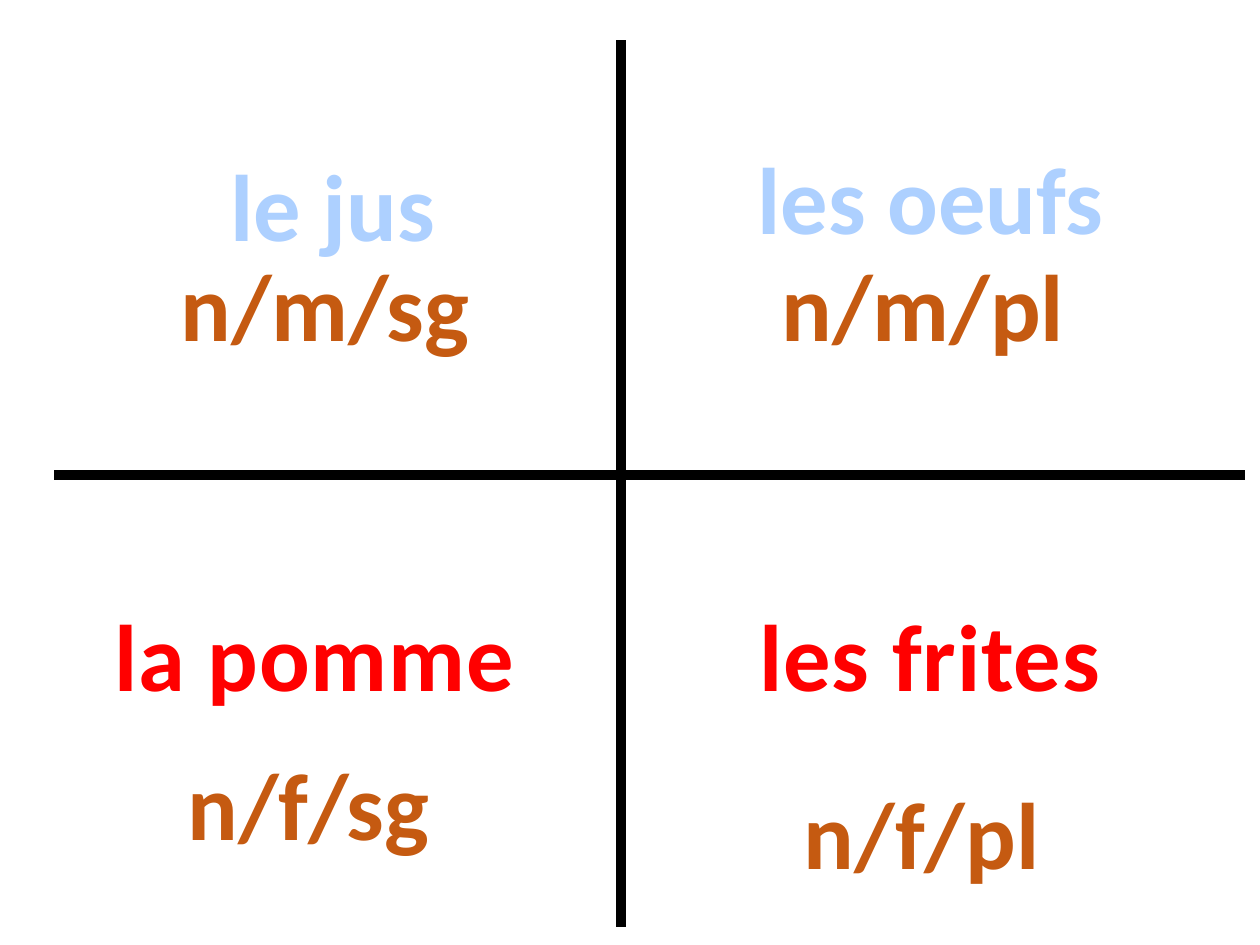
from lxml import etree
from pptx import Presentation
from pptx.dml.color import RGBColor
from pptx.enum import shapes, text
from pptx.oxml.ns import qn
from pptx.util import Inches, Pt

BLACK = RGBColor(0x00, 0x00, 0x00)
MASCULINE = RGBColor(0xAD, 0xD0, 0xFF)
FEMININE = RGBColor(0xFF, 0x00, 0x00)
GRAMMAR = RGBColor(0xC5, 0x5A, 0x11)

LABEL_HEIGHT = 1.01
FONT = {"name": "Calibri", "size": Pt(54), "bold": True}

# Wording, left, top, width, colour
NOUNS = [
    ("le jus", 1.72, 1.12, 1.84, MASCULINE),
    ("la pomme", 0.79, 4.69, 3.41, FEMININE),
    ("les oeufs", 5.9, 1.06, 2.97, MASCULINE),
    ("les frites", 4.82, 4.69, 5.12, FEMININE),
]
GRAMMAR_TAGS = [
    ("n/m/sg", 1.32, 1.91, 2.52, GRAMMAR),
    ("n/f/sg", 1.38, 5.87, 2.14, GRAMMAR),
    ("n/m/pl", 6.09, 1.91, 2.47, GRAMMAR),
    ("n/f/pl", 6.27, 6.1, 2.09, GRAMMAR),
]
# Start x, start y, end x, end y
AXES = [(4.93, 0.32, 4.93, 7.36), (0.43, 3.77, 9.88, 3.77)]


def add_label(page, wording, left, top, width, colour):
    box = page.shapes.add_textbox(
        Inches(left), Inches(top), Inches(width), Inches(LABEL_HEIGHT))
    frame = box.text_frame
    frame.word_wrap = False
    frame.auto_size = text.MSO_AUTO_SIZE.SHAPE_TO_FIT_TEXT
    para = frame.paragraphs[0]
    para.alignment = text.PP_ALIGN.CENTER
    span = para.add_run()
    span.text = wording
    for key, value in FONT.items():
        setattr(span.font, key, value)
    span.font.color.rgb = colour
    if colour == FEMININE:
        # Letter spacing in hundredths of a point
        span.font._element.set("spc", "50")


def add_axis(page, *ends):
    axis = page.shapes.add_connector(
        shapes.MSO_CONNECTOR.STRAIGHT, *map(Inches, ends))
    axis.line.color.rgb = BLACK
    axis.line.width = Pt(6)
    etree.SubElement(axis._element.spPr, qn("a:effectLst"))


def main():
    deck = Presentation()
    deck.slide_width, deck.slide_height = Inches(10), Inches(7.5)
    page = deck.slides.add_slide(deck.slide_layouts[6])

    # Nouns, coloured by gender
    for noun in NOUNS:
        add_label(page, *noun)

    # Cross that divides the four quadrants
    for axis in AXES:
        add_axis(page, *axis)

    # Word class, gender and number
    for tag in GRAMMAR_TAGS:
        add_label(page, *tag)

    deck.save("out.pptx")


if __name__ == "__main__":
    main()
